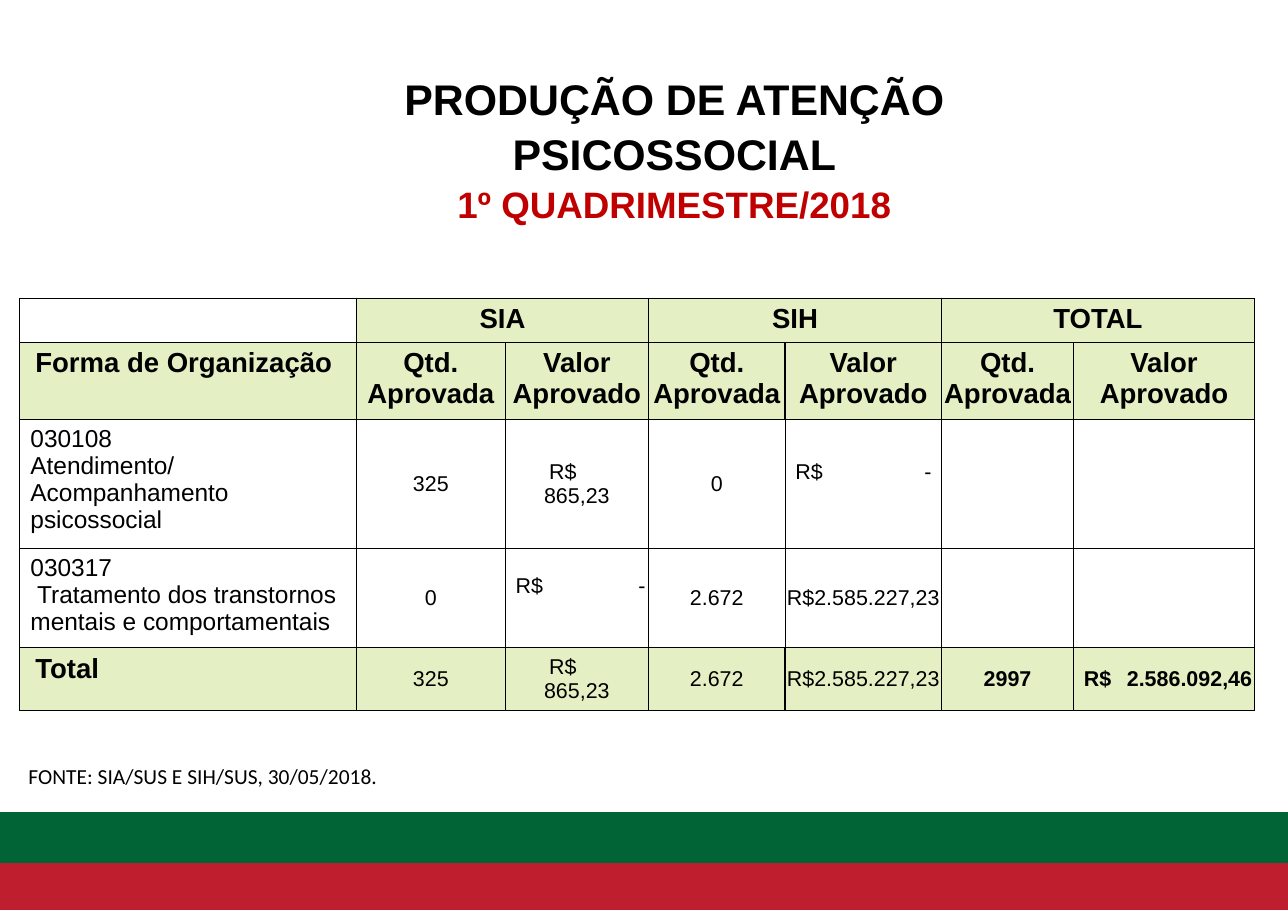
from pptx import Presentation
from pptx.dml.color import RGBColor
from pptx.enum.shapes import MSO_SHAPE as SHAPE
from pptx.enum.text import MSO_ANCHOR as ANCHOR, PP_ALIGN as ALIGN
from pptx.oxml.ns import qn
from pptx.util import Pt
from lxml.etree import SubElement

COLORS = {"black": "000000", "white": "FFFFFF", "red": "BE1E2E", "green": "006436",
          "period": "C00000", "band": "E4F0C3"}


def rgb(name):
    return RGBColor.from_string(COLORS[name])


def add_run(p, text, size, bold=False, color="black", name="Arial"):
    r = p.add_run()
    r.text = text
    for key, value in {"size": Pt(size), "bold": bold, "name": name}.items():
        setattr(r.font, key, value)
    r.font.color.rgb = rgb(color)


prs = Presentation()
prs.slide_width, prs.slide_height = Pt(841.68), Pt(595.44)
s = prs.slides.add_slide(prs.slide_layouts[6])

for color, top in [("red", 562.3), ("green", 531.4)]:
    sp = s.shapes.add_shape(SHAPE.RECTANGLE, 0, Pt(top), prs.slide_width, Pt(32.4))
    sp.shadow.inherit = False
    sp.fill.solid()
    sp.fill.fore_color.rgb = rgb(color)
    sp.line.color.rgb = rgb(color)
    sp.line.width = Pt(0.75)

tf = s.shapes.add_textbox(Pt(161.3), Pt(47), Pt(558.7), Pt(98.6)).text_frame
title_format = {"word_wrap": True, "vertical_anchor": ANCHOR.MIDDLE, "margin_left": 0,
                "margin_right": 0, "margin_top": 0, "margin_bottom": 0}
for key, value in title_format.items():
    setattr(tf, key, value)
title = [("PRODUÇÃO DE ATENÇÃO PSICOSSOCIAL", 28, "black"),
         ("1º QUADRIMESTRE/2018", 24, "period")]
for i, (text, size, color) in enumerate(title):
    p = tf.add_paragraph() if i else tf.paragraphs[0]
    p.alignment = ALIGN.CENTER
    p.line_spacing = 1.07
    add_run(p, text, size, True, color)

tf = s.shapes.add_textbox(Pt(11.5), Pt(495.4), Pt(328.3), Pt(30.2)).text_frame
tf.word_wrap = True
add_run(tf.paragraphs[0], "FONTE: SIA/SUS E SIH/SUS, 30/05/2018.", 14, name="Calibri")

QTY, VALUE = "Qtd.\nAprovada", "Valor\nAprovado"
SIA_VALUE, SIH_VALUE, DASH = "\tR$\n865,23", "R$2.585.227,23", "\tR$\t-"
rows = [
    ["", "SIA", "", "SIH", "", "TOTAL", ""],
    ["Forma de Organização"] + [QTY, VALUE] * 3,
    ["030108\nAtendimento/ Acompanhamento psicossocial", "325", SIA_VALUE, "0", DASH, "", ""],
    ["030317\nTratamento dos transtornos mentais e comportamentais",
     "0", DASH, "2.672", SIH_VALUE, "", ""],
    ["Total", "325", SIA_VALUE, "2.672", SIH_VALUE, "2997", "\tR$\t2.586.092,46"],
]
widths = [220.3, 97.2, 93.6, 89.3, 102.2, 86.4, 118.1]
heights = [28.8, 50.3, 84.3, 64.7, 40.7]
right_tabs = {2: 91, 4: 95, 6: 116}

table = s.shapes.add_table(len(rows), len(widths), Pt(12.7), Pt(195),
                           Pt(sum(widths)), Pt(sum(heights))).table
table.first_row = table.horz_banding = False
for column, width in zip(table.columns, widths):
    column.width = Pt(width)
for row, height in zip(table.rows, heights):
    row.height = Pt(height)

for i, row in enumerate(rows):
    header, body = i < 2, i in (2, 3)
    for j, text in enumerate(row):
        cell = table.cell(i, j)
        thin = {"L": body and j > 0, "R": body and j < 6, "T": i == 3, "B": i == 2}
        for side, is_thin in thin.items():
            ln = SubElement(cell._tc.get_or_add_tcPr(), qn("a:ln" + side),
                            w=str(Pt(0.5 if is_thin else 0.96)))
            SubElement(SubElement(ln, qn("a:solidFill")), qn("a:srgbClr"), val=COLORS["black"])
        cell.fill.solid()
        cell.fill.fore_color.rgb = rgb("white" if body or i == j == 0 else "band")

        number = not header and j > 0
        label = j == 0 and not body
        side_margin = Pt(0.72 if number else 0)
        cell_format = {"margin_left": Pt(10.4) if label else side_margin,
                       "margin_right": side_margin, "margin_top": Pt(3.6),
                       "margin_bottom": Pt(19.6 if text == DASH else 3.6),
                       "vertical_anchor": ANCHOR.MIDDLE if number else ANCHOR.TOP}
        for key, value in cell_format.items():
            setattr(cell, key, value)

        size = 14 if number else 16 if body else 18
        bold = header or label or (i == 4 and j > 4)
        for k, line in enumerate(text.split("\n") if text else []):
            p = cell.text_frame.add_paragraph() if k else cell.text_frame.paragraphs[0]
            tabbed = line.startswith("\t")
            p.alignment = ALIGN.LEFT if j == 0 or tabbed else ALIGN.CENTER
            pPr = p._p.get_or_add_pPr()
            if tabbed:
                stops = [(6, "l"), (right_tabs[j], "r")] if line.count("\t") == 2 else [(28, "l")]
                tabs = SubElement(pPr, qn("a:tabLst"))
                for position, align in stops:
                    SubElement(tabs, qn("a:tab"), pos=str(Pt(position)), algn=align)
            if j == 0 and body:
                pPr.set("marL", str(Pt(7.2)))
                pPr.set("indent", str(Pt(4.4 if i == 3 and k else 0)))
            add_run(p, line, size, bold)

for j in (1, 3, 5):
    table.cell(0, j).merge(table.cell(0, j + 1))

prs.save("out.pptx")
